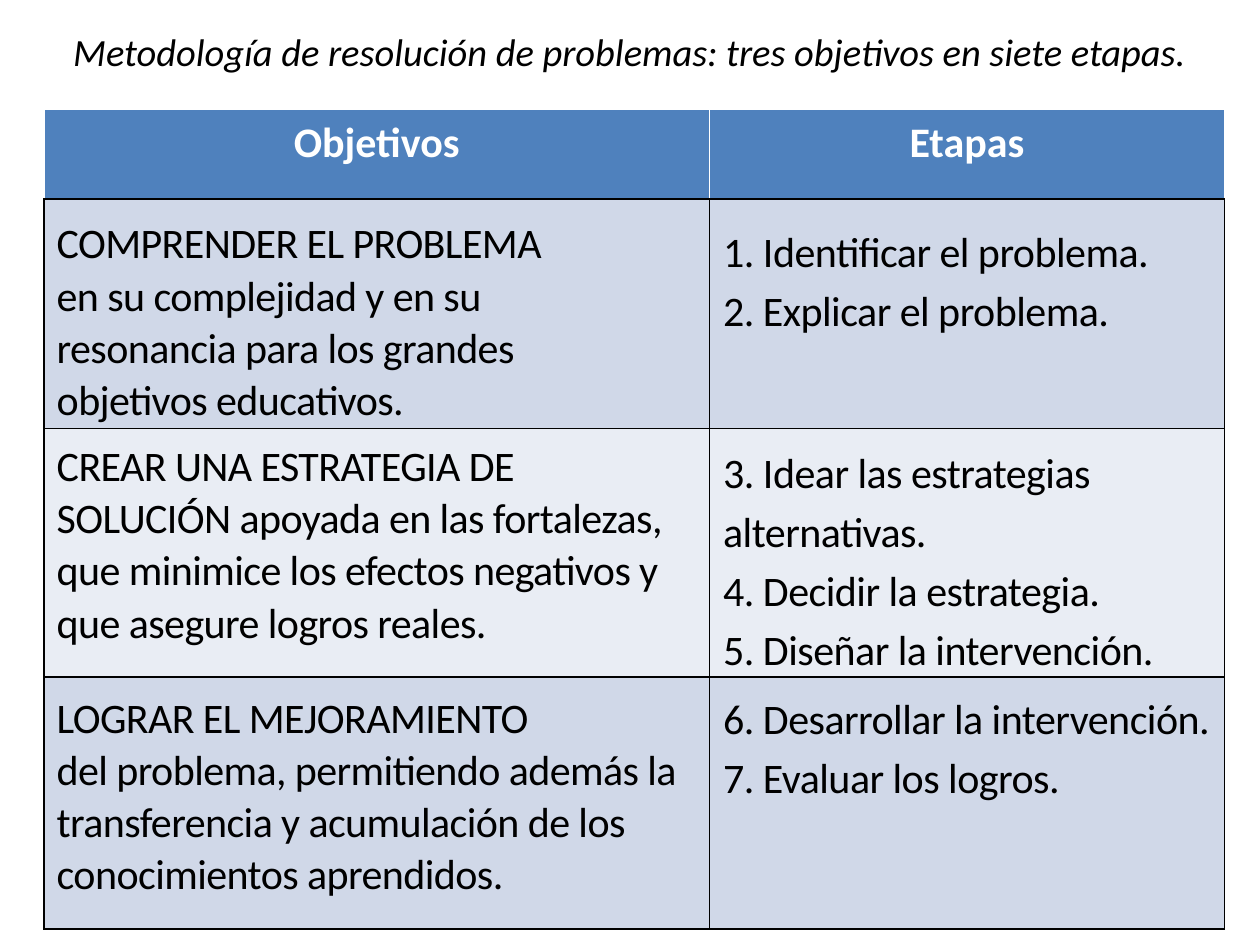
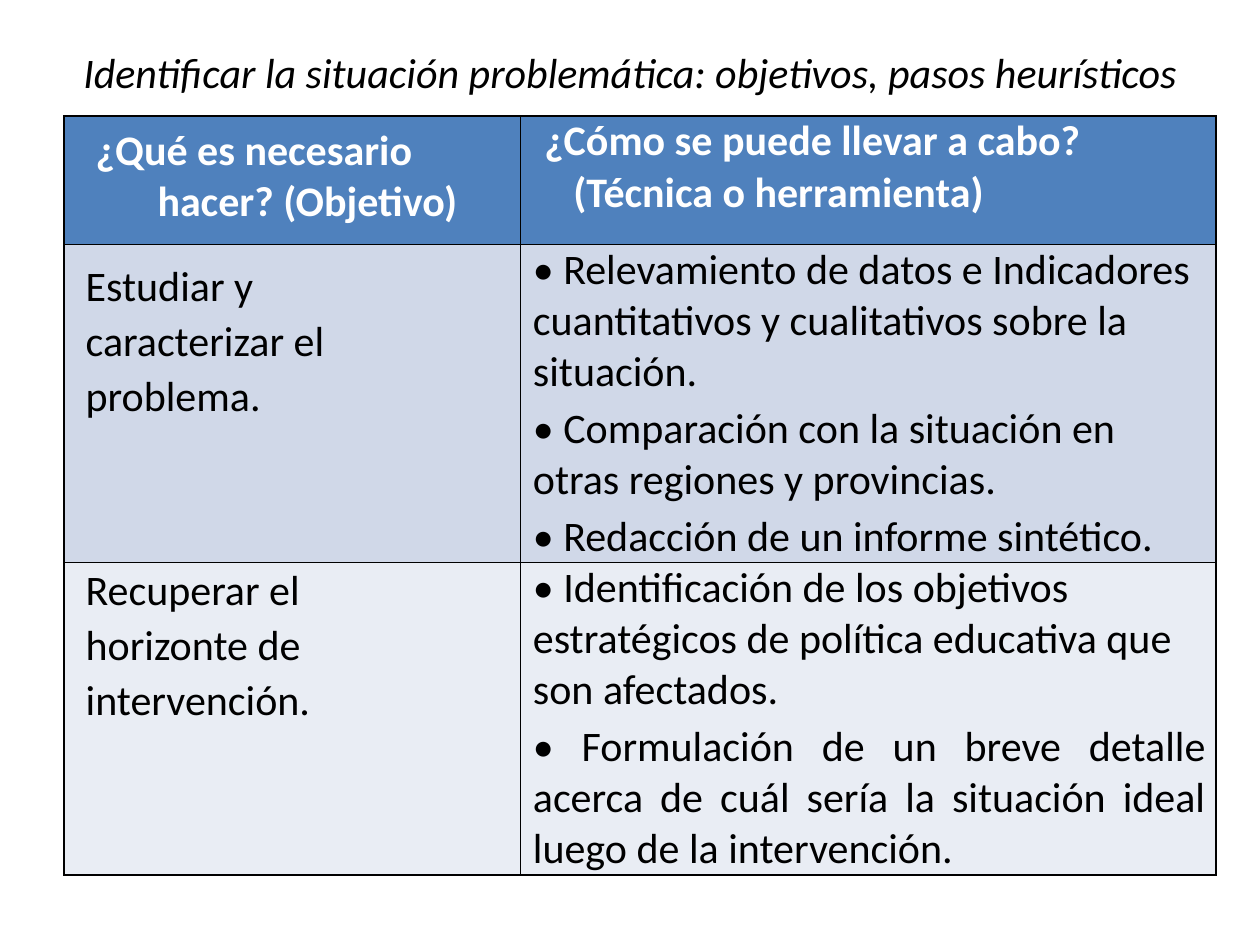
from dataclasses import dataclass

from lxml.etree import SubElement
from pptx import Presentation
from pptx.dml.color import RGBColor
from pptx.enum.text import MSO_ANCHOR, MSO_AUTO_SIZE, PP_ALIGN
from pptx.oxml.ns import qn
from pptx.util import Inches, Pt

SLIDE_WIDTH, SLIDE_HEIGHT = Inches(10), Inches(7.5)
COLUMN, ROW = SLIDE_WIDTH / 100, SLIDE_HEIGHT / 75
COLORS = {
    "text": "000000",
    "header_text": "FFFFFF",
    "header": "4F81BD",
    "odd_row": "D0D8E8",
    "even_row": "E9EDF4",
    "rule": "000000",
    "header_rule": "FFFFFF",
}
FONT = "Calibri"
BODY_SIZE = 24


@dataclass(frozen=True)
class Line:
    """A paragraph; indents are in grid columns, spacing in points."""
    text: str
    indent: float = 1
    first_indent: float = 0
    leading: float = 1.0
    after: float = 0
    tracking: float = 0
    align: PP_ALIGN = PP_ALIGN.LEFT


@dataclass(frozen=True)
class CellText:
    """Cell content; top is in points, right in grid columns."""
    lines: tuple[Line, ...]
    top: float = 0
    right: float = 0


@dataclass(frozen=True)
class Grid:
    left: float
    top: float
    widths: tuple[float, ...]
    heights: tuple[float, ...]
    header_rule: str
    rows: tuple[tuple[CellText, ...], ...]


@dataclass(frozen=True)
class Title:
    text: str
    left: float
    top: float
    width: float
    height: float
    size: float


def heading(text: str) -> Line:
    return Line(text, indent=0, leading=1.15, align=PP_ALIGN.CENTER)


def goal(text: str, leading: float = 1.02) -> Line:
    return Line(text, leading=leading, tracking=-0.35)


def stages(top: float, *texts: str) -> CellText:
    return CellText(tuple(Line(t, 1.1, leading=1.15, tracking=-0.3) for t in texts), top)


def question(text: str, indent: float, first_indent: float, top: float = 0) -> CellText:
    return CellText((Line(text, indent, first_indent, after=3),), top)


def step(text: str, top: float = 0) -> CellText:
    return CellText((Line(text, 1.7, leading=1.07),), top, right=11)


def technique(text: str, align: PP_ALIGN = PP_ALIGN.LEFT) -> Line:
    return Line("• " + text, after=3, align=align)


METHOD_TITLE = Title(
    "Metodología de resolución de problemas: tres objetivos en siete etapas.",
    3.5, 1.7, 92.9, 4.7, 22)
METHOD = Grid(3.5, 8.7, (52.8, 40.9), (7.1, 18.2, 19.7, 20), "header_rule", (
    (CellText((heading("Objetivos"),)), CellText((heading("Etapas"),))),
    (CellText((goal("COMPRENDER EL PROBLEMA", 1.15),
               goal("en su complejidad y en su resonancia para los grandes "
                    "objetivos educativos.")), 7, 9),
     stages(12, "1. Identificar el problema.", "2. Explicar el problema.")),
    (CellText((goal("CREAR UNA ESTRATEGIA DE SOLUCIÓN apoyada en las fortalezas, "
                    "que minimice los efectos negativos y que asegure logros "
                    "reales."),), 7, 2),
     stages(7.5, "3. Idear las estrategias alternativas.",
            "4. Decidir la estrategia.", "5. Diseñar la intervención.")),
    (CellText((goal("LOGRAR EL MEJORAMIENTO", 1.15),
               goal("del problema, permitiendo además la transferencia y "
                    "acumulación de los conocimientos aprendidos.")), 5),
     stages(5.5, "6. Desarrollar la intervención.", "7. Evaluar los logros.")),
))

IDENTIFY_TITLE = Title(
    "Identificar la situación problemática: objetivos, pasos heurísticos",
    5, 3, 90, 5.4, 24)
IDENTIFY = Grid(5.1, 9.2, (36.2, 55.2), (10.2, 25.2, 24.8), "rule", (
    (question("¿Qué es necesario hacer? (Objetivo)", 7.4, -4.9, 5.5),
     question("¿Cómo se puede llevar a cabo? (Técnica o herramienta)", 4.2, -2.3)),
    (step("Estudiar y caracterizar el problema.", 8),
     CellText((technique("Relevamiento de datos e Indicadores cuantitativos y "
                         "cualitativos sobre la situación."),
               technique("Comparación con la situación en\votras regiones y provincias."),
               technique("Redacción de un informe sintético.")))),
    (step("Recuperar el horizonte de intervención."),
     CellText((technique("Identificación de los objetivos estratégicos de política "
                         "educativa que son afectados."),
               technique("Formulación de un breve detalle acerca de cuál sería la "
                         "situación ideal luego de la intervención.",
                         PP_ALIGN.JUSTIFY)), right=0.8)),
))


def style_font(paragraph, size: float, color: str, bold=False, italic=False) -> None:
    font = paragraph.font
    font.name, font.size, font.bold, font.italic = FONT, Pt(size), bold, italic
    font.color.rgb = RGBColor.from_string(COLORS[color])


def write_line(paragraph, line: Line, is_header: bool) -> None:
    paragraph.text = line.text
    paragraph.alignment = line.align
    paragraph.line_spacing = line.leading
    paragraph.space_before, paragraph.space_after = Pt(0), Pt(line.after)
    style_font(paragraph, BODY_SIZE, "header_text" if is_header else "text", is_header)
    properties = paragraph._p.get_or_add_pPr()
    properties.set("marL", str(round(line.indent * COLUMN)))
    properties.set("indent", str(round(line.first_indent * COLUMN)))
    properties.find(qn("a:defRPr")).set("spc", str(round(line.tracking * 100)))


def set_borders(cell, colors: dict[str, str]) -> None:
    """Draw one-point borders, keyed by side: L, R, T, B."""
    for side, color in colors.items():
        border = SubElement(cell._tc.get_or_add_tcPr(), qn(f"a:ln{side}"), w=str(Pt(1)))
        fill = SubElement(border, qn("a:solidFill"))
        SubElement(fill, qn("a:srgbClr"), val=COLORS[color])


def fill_cell(cell, content: CellText, row: int, header_rule: str) -> None:
    is_header = row == 0
    side_rule = header_rule if is_header else "rule"
    set_borders(cell, {"L": side_rule, "R": side_rule, "T": side_rule, "B": "rule"})
    cell.fill.solid()
    band = "header" if is_header else "odd_row" if row % 2 else "even_row"
    cell.fill.fore_color.rgb = RGBColor.from_string(COLORS[band])
    cell.margin_left = cell.margin_bottom = 0
    cell.margin_top, cell.margin_right = Pt(content.top), round(content.right * COLUMN)
    frame = cell.text_frame
    for index, line in enumerate(content.lines):
        paragraph = frame.add_paragraph() if index else frame.paragraphs[0]
        write_line(paragraph, line, is_header)


def add_grid(slide, grid: Grid) -> None:
    table = slide.shapes.add_table(
        len(grid.heights), len(grid.widths),
        round(grid.left * COLUMN), round(grid.top * ROW),
        round(sum(grid.widths) * COLUMN), round(sum(grid.heights) * ROW)).table
    table.horz_banding = False
    for column, width in zip(table.columns, grid.widths):
        column.width = round(width * COLUMN)
    for row, height in zip(table.rows, grid.heights):
        row.height = round(height * ROW)
    for r, contents in enumerate(grid.rows):
        for c, content in enumerate(contents):
            fill_cell(table.cell(r, c), content, r, grid.header_rule)


def place_title(slide, title: Title) -> None:
    heading_shape = slide.shapes.title
    heading_shape.left, heading_shape.top = round(title.left * COLUMN), round(title.top * ROW)
    heading_shape.width, heading_shape.height = round(title.width * COLUMN), round(title.height * ROW)
    frame = heading_shape.text_frame
    frame.text = title.text
    frame.word_wrap = True
    frame.auto_size = MSO_AUTO_SIZE.NONE
    frame.vertical_anchor = MSO_ANCHOR.MIDDLE
    frame.paragraphs[0].alignment = PP_ALIGN.CENTER
    style_font(frame.paragraphs[0], title.size, "text", italic=True)


def main() -> None:
    deck = Presentation()
    deck.slide_width, deck.slide_height = SLIDE_WIDTH, SLIDE_HEIGHT
    title_only = deck.slide_layouts[5]
    for title, grid in ((METHOD_TITLE, METHOD), (IDENTIFY_TITLE, IDENTIFY)):
        slide = deck.slides.add_slide(title_only)
        place_title(slide, title)
        add_grid(slide, grid)
    deck.save("out.pptx")


if __name__ == "__main__":
    main()
